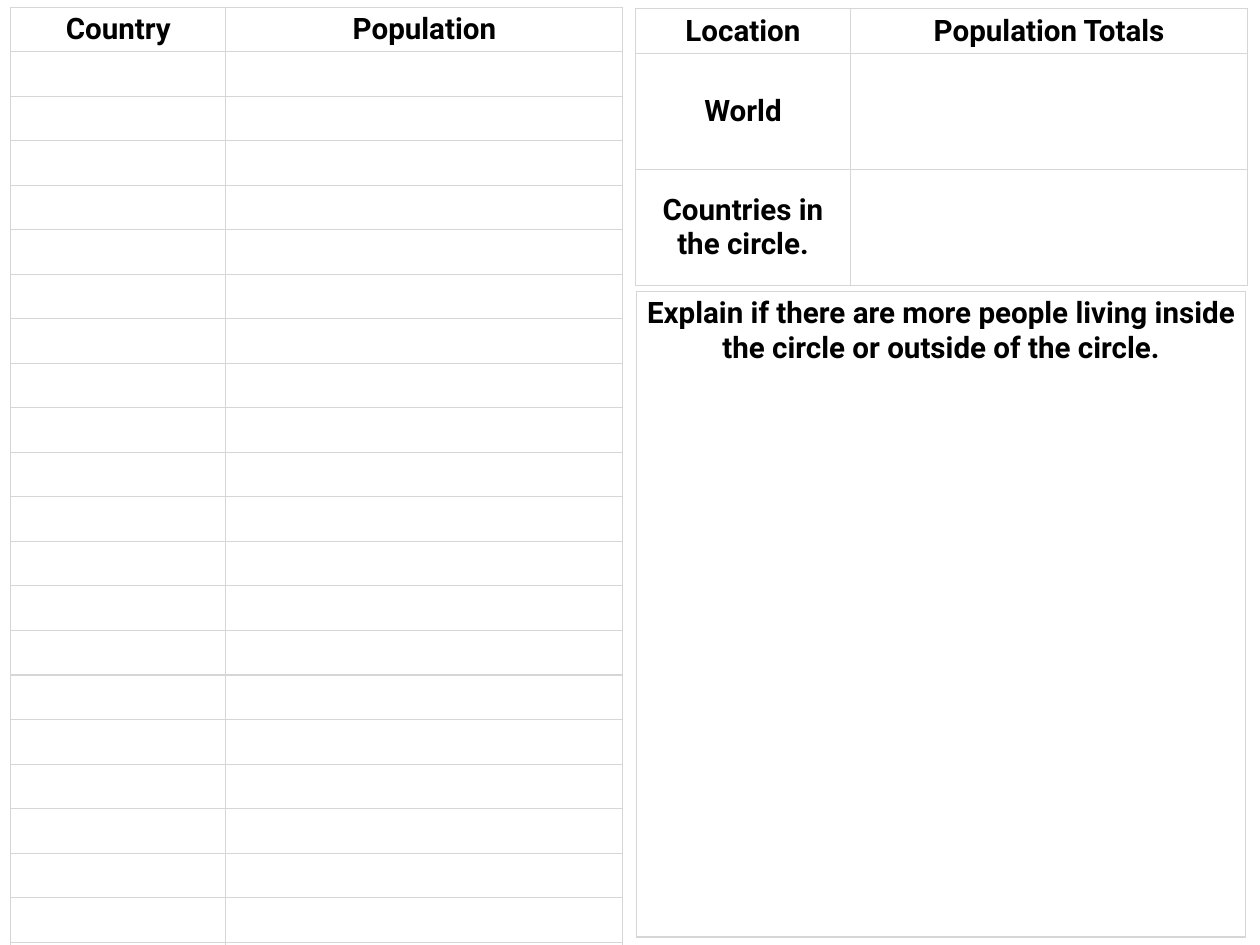
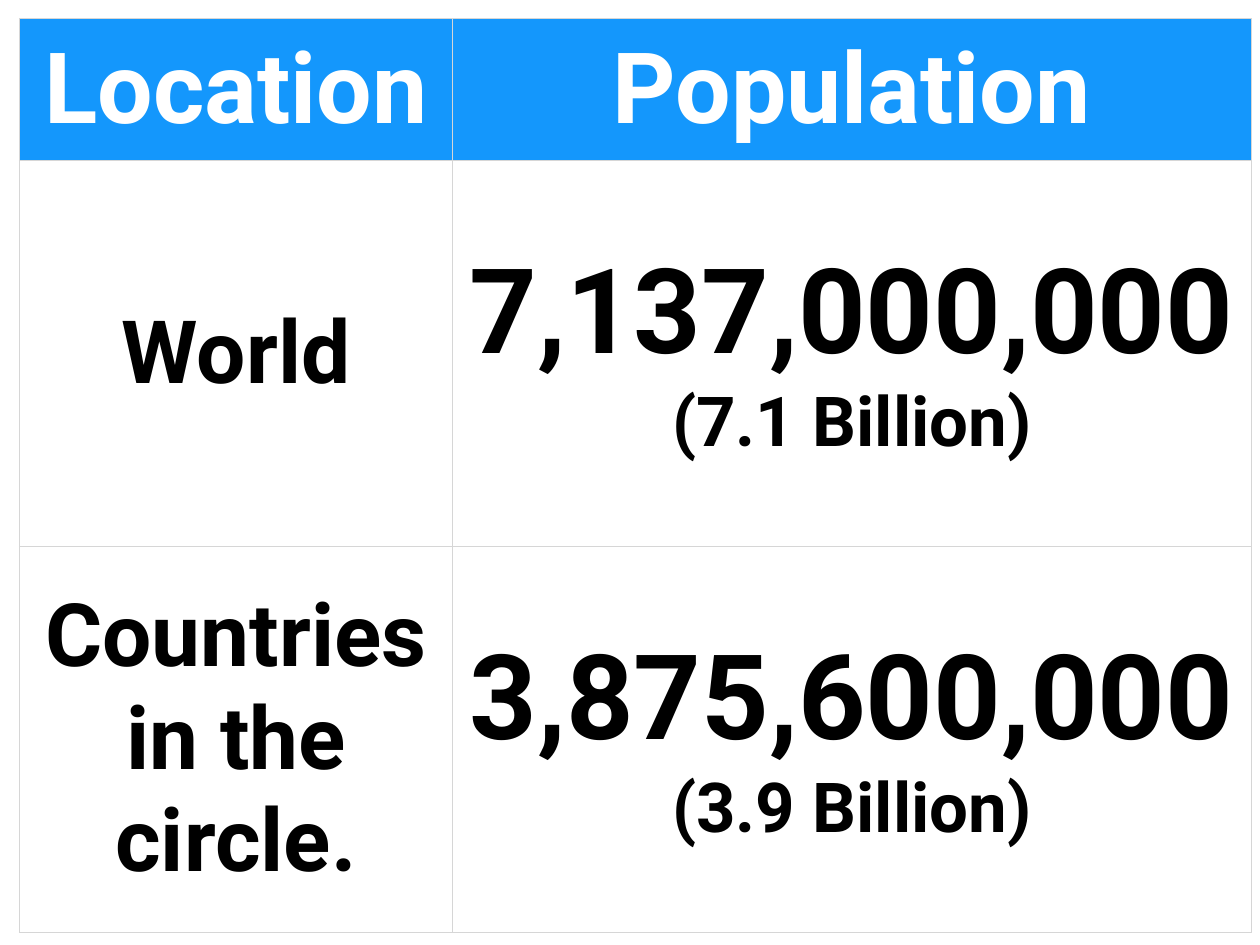
from lxml import etree
from pptx import Presentation
from pptx import util as u
from pptx.dml.color import RGBColor
from pptx.enum import text
from pptx.oxml import ns

COLORS = {"ink": "000000", "white": "FFFFFF", "header": "1497FC", "rule": "D6D6D6"}
FONT = "Roboto"
GRID = u.Inches(0.1)  # one grid column or row
PLACES = ["World", "Countries in the circle."]


class Sheet:
    """Holds the style and the current slide."""

    def __init__(self, columns, rows):
        self.deck = Presentation()
        self.deck.slide_width = self.length(columns)
        self.deck.slide_height = self.length(rows)
        self.slide = None

    @staticmethod
    def length(units):
        return u.Emu(round(units * GRID))

    def new_slide(self):
        self.slide = self.deck.slides.add_slide(self.deck.slide_layouts[6])

    def table(self, left, top, columns, rows, content, size=24, header_size=None,
              header_fill=None, anchor=text.MSO_ANCHOR.MIDDLE):
        """Draw a table; content lists rows of cells, missing ones stay empty."""
        box = [self.length(n) for n in (left, top, sum(columns), sum(rows))]
        grid = self.slide.shapes.add_table(len(rows), len(columns), *box).table
        grid.first_row = grid.horz_banding = False
        for column, width in zip(grid.columns, columns):
            column.width = self.length(width)
        for r, height in enumerate(rows):
            grid.rows[r].height = self.length(height)
            is_header = r == 0 and header_fill is not None
            row_size = header_size if is_header else size
            for c in range(len(columns)):
                cell = grid.cell(r, c)
                self.style_cell(cell, anchor, header_fill if is_header else None)
                if r < len(content) and c < len(content[r]):
                    self.fill_text(cell, content[r][c], row_size,
                                   "white" if is_header else "ink")

    def style_cell(self, cell, anchor, fill):
        cell.vertical_anchor = anchor
        cell.margin_left = cell.margin_right = u.Pt(4)
        cell.margin_top = cell.margin_bottom = u.Pt(4)
        if fill:
            cell.fill.solid()
            cell.fill.fore_color.rgb = RGBColor.from_string(COLORS[fill])
        else:
            cell.fill.background()
        # Borders come before the fill in the cell properties
        props = cell._tc.get_or_add_tcPr()
        for i, side in enumerate(("lnL", "lnR", "lnT", "lnB")):
            border = etree.Element(ns.qn("a:" + side), w=str(u.Pt(1)))
            solid = etree.SubElement(border, ns.qn("a:solidFill"))
            etree.SubElement(solid, ns.qn("a:srgbClr"), val=COLORS["rule"])
            props.insert(i, border)

    def fill_text(self, cell, lines, size, color):
        """Set one string, or a list of (string, size) paragraphs."""
        if isinstance(lines, str):
            lines = [(lines, size)]
        frame = cell.text_frame
        for i, (line, points) in enumerate(lines):
            paragraph = frame.add_paragraph() if i else frame.paragraphs[0]
            paragraph.text = line
            paragraph.alignment = text.PP_ALIGN.CENTER
            font = paragraph.font
            font.name, font.size, font.bold = FONT, u.Pt(points), True
            font.color.rgb = RGBColor.from_string(COLORS[color])


def worksheet(sheet):
    sheet.new_slide()
    columns = [24.3, 44.8]

    # Country list
    sheet.table(1.2, 0.8, columns, [5.03] * 22, [["Country", "Population"]])

    # Totals to fill in
    sheet.table(71.7, 1, columns, [4.9, 13.1, 13.1],
                [["Location", "Population Totals"]] + [[place] for place in PLACES])

    # Written answer
    sheet.table(71.8, 32.9, [68.8], [72.9],
                [["Explain if there are more people living inside "
                  "the circle or outside of the circle."]],
                anchor=text.MSO_ANCHOR.TOP)


def answers(sheet):
    sheet.new_slide()
    totals = [("7,137,000,000", "(7.1 Billion)"), ("3,875,600,000", "(3.9 Billion)")]
    rows = [[place, [(exact, 96), (rounded, 56)]]
            for place, (exact, rounded) in zip(PLACES, totals)]
    sheet.table(2.2, 2.1, [48.9, 90.1], [16, 43.6, 43.6],
                [["Location", "Population"]] + rows,
                size=71, header_size=80, header_fill="header")


def main():
    sheet = Sheet(142.2, 106.7)
    worksheet(sheet)
    answers(sheet)
    sheet.deck.save("out.pptx")


if __name__ == "__main__":
    main()
